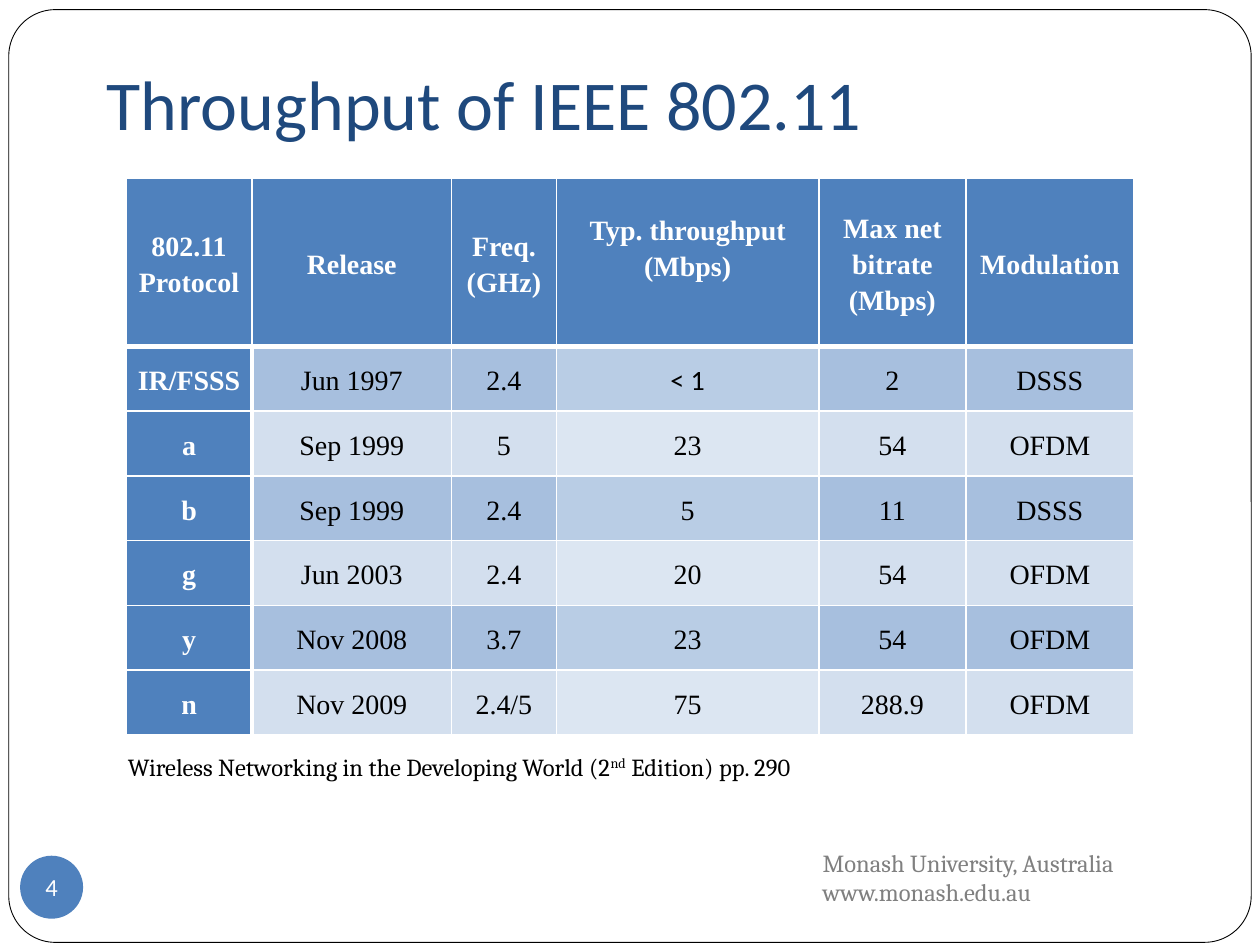
import pptx
import pptx.dml.color
import pptx.enum.shapes
import pptx.enum.text
import pptx.oxml
import pptx.oxml.ns
import pptx.util

Pt = pptx.util.Pt
ANCHOR = pptx.enum.text.MSO_ANCHOR
ALIGN = pptx.enum.text.PP_ALIGN
SHAPE = pptx.enum.shapes.MSO_SHAPE

COLOURS = {
    "white": "FFFFFF",
    "black": "000000",
    "grey": "808080",
    "navy": "1F497D",
    "blue": "4F81BD",
    "odd": "A7BFDE",
    "even": "D3DFEE",
    "odd throughput": "B9CDE5",
    "even throughput": "DCE6F2",
}


def rgb(name):
    return pptx.dml.color.RGBColor.from_string(COLOURS[name])


def style(paragraph, size, face, colour, bold=False):
    paragraph.font.size = Pt(size)
    paragraph.font.name = face
    paragraph.font.bold = bold
    paragraph.font.color.rgb = rgb(colour)


deck = pptx.Presentation()
deck.slide_width, deck.slide_height = Pt(720), Pt(540)
page = deck.slides.add_slide(deck.slide_layouts[6])

frame = page.shapes.add_shape(SHAPE.ROUNDED_RECTANGLE, Pt(5), Pt(5.5), Pt(710), Pt(533))
frame.adjustments[0] = 0.05
frame.shadow.inherit = False
frame.fill.solid()
frame.fill.fore_color.rgb = rgb("white")
frame.line.color.rgb = rgb("black")
frame.line.width = Pt(0.5)

footer = page.shapes.add_textbox(Pt(463), Pt(481), Pt(187), Pt(41))
footer.text_frame.word_wrap = False
footer.text_frame.text = "Monash University, Australia\nwww.monash.edu.au"
for para in footer.text_frame.paragraphs:
    style(para, 14, "Cambria", "grey")

title = page.shapes.add_textbox(Pt(54), Pt(0), Pt(612), Pt(90))
title.text_frame.word_wrap = True
title.text_frame.vertical_anchor = ANCHOR.BOTTOM
title.text_frame.margin_bottom = Pt(7.2)
title.text_frame.text = "Throughput of IEEE 802.11"
style(title.text_frame.paragraphs[0], 40, "Calibri", "navy")

badge = page.shapes.add_shape(SHAPE.OVAL, Pt(11.5), Pt(489), Pt(36), Pt(36))
badge.shadow.inherit = False
badge.fill.solid()
badge.fill.fore_color.rgb = rgb("blue")
badge.line.fill.background()
number = badge.text_frame
number.margin_left = number.margin_right = number.margin_top = number.margin_bottom = 0
number.word_wrap = False
number.vertical_anchor = ANCHOR.MIDDLE
number.text = "4"
number.paragraphs[0].alignment = ALIGN.CENTER
style(number.paragraphs[0], 14, "Calibri", "white")

ROWS = [
    ["802.11\nProtocol", "Release", "Freq.\n(GHz)", "Typ. throughput\n(Mbps)\n",
     "Max net bitrate\n(Mbps)", "Modulation"],
    ["IR/FSSS", "Jun 1997", "2.4", "< 1", "2", "DSSS"],
    ["a", "Sep 1999", "5", "23", "54", "OFDM"],
    ["b", "Sep 1999", "2.4", "5", "11", "DSSS"],
    ["g", "Jun 2003", "2.4", "20", "54", "OFDM"],
    ["y", "Nov 2008", "3.7", "23", "54", "OFDM"],
    ["n", "Nov 2009", "2.4/5", "75", "288.9", "OFDM"],
]
WIDTHS = [72, 114, 60, 150, 84, 96]
HEIGHTS = [96] + [37] * 6

table = page.shapes.add_table(
    len(ROWS), len(WIDTHS), Pt(72), Pt(102), Pt(sum(WIDTHS)), Pt(sum(HEIGHTS))
).table
for column, width in zip(table.columns, WIDTHS):
    column.width = Pt(width)
for row, height in zip(table.rows, HEIGHTS):
    row.height = Pt(height)

for r, texts in enumerate(ROWS):
    for c, text in enumerate(texts):
        cell = table.cell(r, c)
        heading = r == 0 or c == 0
        thick = {
            "L": r > 0 and c == 1,
            "R": r > 0 and c == 0,
            "T": r == 1,
            "B": r == 0,
        }
        for side, is_thick in thick.items():
            cell._tc.get_or_add_tcPr().append(pptx.oxml.parse_xml(
                f'<a:ln{side} {pptx.oxml.ns.nsdecls("a")} w="{Pt(3 if is_thick else 1)}">'
                f'<a:solidFill><a:srgbClr val="{COLOURS["white"]}"/></a:solidFill></a:ln{side}>'
            ))
        band = ("odd" if r % 2 else "even") + (" throughput" if c == 3 else "")
        cell.fill.solid()
        cell.fill.fore_color.rgb = rgb("blue" if heading else band)
        cell.vertical_anchor = ANCHOR.MIDDLE
        cell.margin_left = cell.margin_right = Pt(5)
        cell.margin_top = cell.margin_bottom = 0
        para = cell.text_frame.paragraphs[0]
        para.text = text
        para.alignment = ALIGN.CENTER
        para.line_spacing = 1.15
        face = "Calibri" if text == "< 1" else "Times New Roman"
        style(para, 16, face, "white" if heading else "black", heading)

source = page.shapes.add_textbox(Pt(66), Pt(426), Pt(576), Pt(46))
source.text_frame.word_wrap = True
para = source.text_frame.paragraphs[0]
for text in ["Wireless Networking in the Developing World (2", "nd", " Edition) pp. 290"]:
    span = para.add_run()
    span.text = text
    if text == "nd":
        span._r.get_or_add_rPr().set("baseline", "30000")
style(para, 14, "Cambria", "black")

deck.save("out.pptx")
